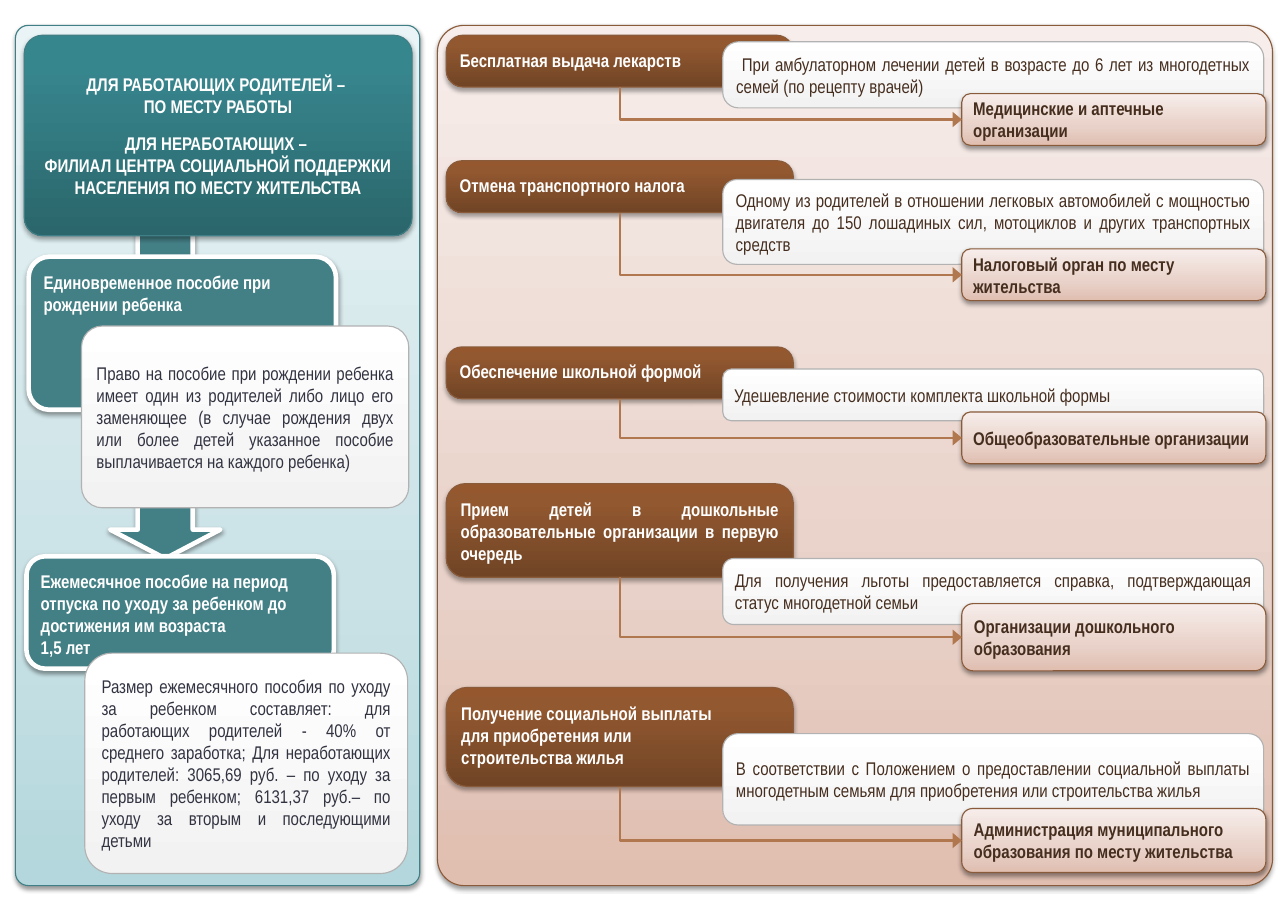
from lxml import etree
from pptx import Presentation
from pptx.dml.color import RGBColor
from pptx.enum.shapes import MSO_CONNECTOR, MSO_SHAPE
from pptx.enum.text import MSO_ANCHOR, PP_ALIGN
from pptx.oxml import parse_xml
from pptx.oxml.ns import nsdecls, qn
from pptx.util import Inches, Pt

ROUND, DOWN_ARROW = MSO_SHAPE.ROUNDED_RECTANGLE, MSO_SHAPE.DOWN_ARROW
ELBOW = MSO_CONNECTOR.ELBOW
TOP, MIDDLE = MSO_ANCHOR.TOP, MSO_ANCHOR.MIDDLE
LEFT, CENTER, JUSTIFY = PP_ALIGN.LEFT, PP_ALIGN.CENTER, PP_ALIGN.JUSTIFY

# Gradients run from top to bottom: (position in percent, colour)
AQUA = [(0, "EAF4F6"), (65, "CAE2E6"), (100, "B3D7DC")]
SAND = [(0, "F7EDEA"), (65, "E8D1C8"), (100, "E0BEB0")]
DEEP_TEAL = [(0, "36868E"), (20, "37848C"), (100, "2A666B")]
BROWN = [(0, "95582E"), (20, "925830"), (100, "704425")]
PAPER = [(0, "FFFFFF"), (100, "F2F2F2")]
TEAL, TEAL_LINE, BROWN_LINE = "438086", "407F85", "8A5B3A"
ARROW, GREY, WHITE = "B1774F", "B2B2B2", "FFFFFF"
INK, DARK_BROWN = "323341", "462E1F"
SOFT, STRONG = (38, 1.6), (35, 1.8)  # shadow opacity and distance


def rgb(value):
    return RGBColor.from_string(value)


class Board:
    font, size, inset = "Arial Narrow", Pt(12), Inches(0.08)

    def __init__(self, prs):
        self.s = prs.slides.add_slide(prs.slide_layouts[6])

    def shape(self, at, adj, fill, line, width=0.75, shadow=SOFT, kind=ROUND):
        """Preset shape; adjustments are given in percent."""
        sp = self.s.shapes.add_shape(kind, *map(Inches, at))
        for i, percent in enumerate(adj):
            sp.adjustments[i] = percent / 100
        if isinstance(fill, str):
            sp.fill.solid()
            sp.fill.fore_color.rgb = rgb(fill)
        else:
            self.gradient(sp, fill)
        sp.line.color.rgb = rgb(line)
        sp.line.width = Pt(width)
        sp.shadow.inherit = False
        if shadow:
            self.shadow(sp, *shadow)
        return sp

    def gradient(self, sp, stops):
        sp.fill.gradient()
        sp.fill.gradient_angle = 270
        stop_list = sp._element.spPr.find(".//" + qn("a:gsLst"))
        for old in list(stop_list):
            stop_list.remove(old)
        for pos, color in stops:
            gs = etree.SubElement(stop_list, qn("a:gs"), pos=str(pos * 1000))
            etree.SubElement(gs, qn("a:srgbClr"), val=color)

    def shadow(self, sp, opacity, distance):
        sp._element.spPr.find(qn("a:effectLst")).append(parse_xml(
            f'<a:outerShdw {nsdecls("a")} blurRad="{Pt(3.1)}" dist="{Pt(distance)}" '
            f'dir="5400000" rotWithShape="0"><a:srgbClr val="000000">'
            f'<a:alpha val="{opacity * 1000}"/></a:srgbClr></a:outerShdw>'))

    def text(self, sp, paragraphs, color, bold=False, align=LEFT, anchor=MIDDLE, after=0):
        tf = sp.text_frame
        tf.word_wrap = True
        tf.vertical_anchor = anchor
        tf.margin_left = tf.margin_right = tf.margin_top = tf.margin_bottom = self.inset
        for i, line in enumerate(paragraphs):
            p = tf.paragraphs[0] if i == 0 else tf.add_paragraph()
            p.text = line
            p.alignment = align
            p.space_after = Pt(after)
            p.font.name, p.font.size, p.font.bold = self.font, self.size, bold
            p.font.color.rgb = rgb(color)

    def paper(self, at, adj, text, color):
        sp = self.shape(at, [adj], PAPER, GREY, shadow=None)
        self.text(sp, [text], color, align=JUSTIFY)

    def heading(self, top, height, adj, lines):
        sp = self.shape((4.05, top, 3.15, height), [adj], BROWN, BROWN_LINE, shadow=STRONG)
        self.text(sp, lines, WHITE, True, JUSTIFY, TOP)
        return sp

    def provider(self, top, height, text):
        sp = self.shape((8.73, top, 2.76, height), [16.67], SAND, BROWN_LINE)
        self.text(sp, [text], DARK_BROWN, True)
        return sp

    def elbow(self, start, end):
        """Arrow going down from the bottom of start, then right to the side of end."""
        x1, y1 = start.left + start.width // 2, start.top + start.height
        x2, y2 = end.left, end.top + end.height // 2
        c = self.s.shapes.add_connector(ELBOW, x1, y1, x2, y2)
        c.begin_connect(start, 2)
        c.end_connect(end, 1)
        c.line.color.rgb = rgb(ARROW)
        c.line.width = Pt(1.5)
        spPr = c._element.spPr
        spPr.find(qn("a:prstGeom")).set("prst", "bentConnector2")
        # The one-bend preset is turned by 270 degrees and mirrored
        run, drop = x2 - x1, y2 - y1
        c.left, c.top = (x1 + x2 - drop) // 2, (y1 + y2 - run) // 2
        c.width, c.height = drop, run
        xfrm = spPr.find(qn("a:xfrm"))
        xfrm.set("rot", "16200000")
        xfrm.set("flipH", "1")
        etree.SubElement(spPr.find(qn("a:ln")), qn("a:tailEnd"), type="triangle", w="lg", len="med")
        etree.SubElement(spPr, qn("a:effectLst"))


# Right column: top, height, (rounding in percent,) text
HEADINGS = [
    (0.32, 0.47, 32.4, ["Бесплатная выдача лекарств"]),
    (1.46, 0.47, 30.2, ["Отмена транспортного налога"]),
    (3.15, 0.47, 30.2, ["Обеспечение школьной формой"]),
    (4.39, 0.85, 20.4,
     ["Прием детей в дошкольные образовательные организации в первую очередь"]),
    (6.24, 0.9, 21.4,
     ["Получение социальной выплаты ", "для приобретения или ", "строительства жилья"]),
]
NOTES = [
    (0.38, 0.6, 23.8, " При амбулаторном лечении детей в возрасте до 6 лет из "
     "многодетных семей (по рецепту врачей)"),
    (1.63, 0.77, 16.67, "Одному из родителей в отношении легковых автомобилей с мощностью "
     "двигателя до 150 лошадиных сил, мотоциклов и других транспортных средств"),
    (3.35, 0.47, 16.67, "Удешевление стоимости комплекта школьной формы"),
    (5.07, 0.6, 16.67, "Для получения льготы предоставляется справка, подтверждающая "
     "статус многодетной семьи"),
    (6.66, 0.83, 16.67, "В соответствии с Положением о предоставлении социальной выплаты "
     "многодетным семьям для приобретения или строительства жилья"),
]
PROVIDERS = [
    (0.85, 0.47, "Медицинские и аптечные организации"),
    (2.26, 0.47, "Налоговый орган по месту жительства"),
    (3.74, 0.47, "Общеобразовательные организации"),
    (5.48, 0.61, "Организации дошкольного образования"),
    (7.34, 0.58, "Администрация муниципального образования по месту жительства"),
]


def main():
    prs = Presentation()
    prs.slide_width, prs.slide_height = Inches(11.69), Inches(8.27)
    board = Board(prs)

    # Panels and the arrow behind the left column
    board.shape((0.14, 0.23, 3.67, 7.81), [3.2], AQUA, TEAL_LINE)
    board.shape((1, 0.85, 1, 4.22), [50, 26.2], TEAL, WHITE, 3, kind=DOWN_ARROW)
    board.shape((3.97, 0.23, 7.58, 7.81), [3.2], SAND, BROWN_LINE)

    # Left column: where to apply
    header = board.shape((0.22, 0.32, 3.52, 1.82), [9.1], DEEP_TEAL, TEAL_LINE, shadow=STRONG)
    board.text(header, [
        "ДЛЯ РАБОТАЮЩИХ РОДИТЕЛЕЙ – \nПО МЕСТУ РАБОТЫ",
        "ДЛЯ НЕРАБОТАЮЩИХ – \nФИЛИАЛ ЦЕНТРА СОЦИАЛЬНОЙ ПОДДЕРЖКИ НАСЕЛЕНИЯ "
        "ПО МЕСТУ ЖИТЕЛЬСТВА"], WHITE, True, CENTER, after=10)

    # Left column: allowances
    for at, adj, lines in [
        ((0.26, 2.33, 2.79, 1.39), 13.6, ["Единовременное пособие при рождении ребенка"]),
        ((0.24, 5.05, 2.79, 1.02), 16.67,
         ["Ежемесячное пособие на период отпуска по уходу за ребенком до достижения "
          "им возраста", "1,5 лет"]),
    ]:
        board.text(board.shape(at, [adj], TEAL, WHITE, 3), lines, WHITE, True, anchor=TOP)
    board.paper((0.74, 2.96, 2.97, 1.65), 11.5,
                "Право на пособие при рождении ребенка имеет один из родителей либо лицо "
                "его заменяющее (в случае рождения двух или более детей указанное пособие "
                "выплачивается на каждого ребенка)", INK)
    board.paper((0.77, 5.93, 2.93, 2), 12.4,
                "Размер ежемесячного пособия по уходу за ребенком составляет: для "
                "работающих родителей - 40% от среднего заработка; Для неработающих "
                "родителей: 3065,69 руб. – по уходу за первым ребенком; 6131,37 руб.– по "
                "уходу за вторым и последующими детьми", INK)

    # Right column: benefits, their terms, who provides them
    headings = [board.heading(*row) for row in HEADINGS]
    for top, height, adj, note in NOTES:
        board.paper((6.56, top, 4.91, height), adj, note, DARK_BROWN)
    providers = [board.provider(*row) for row in PROVIDERS]
    for heading, provider in zip(headings, providers):
        board.elbow(heading, provider)

    prs.save("out.pptx")


if __name__ == "__main__":
    main()
